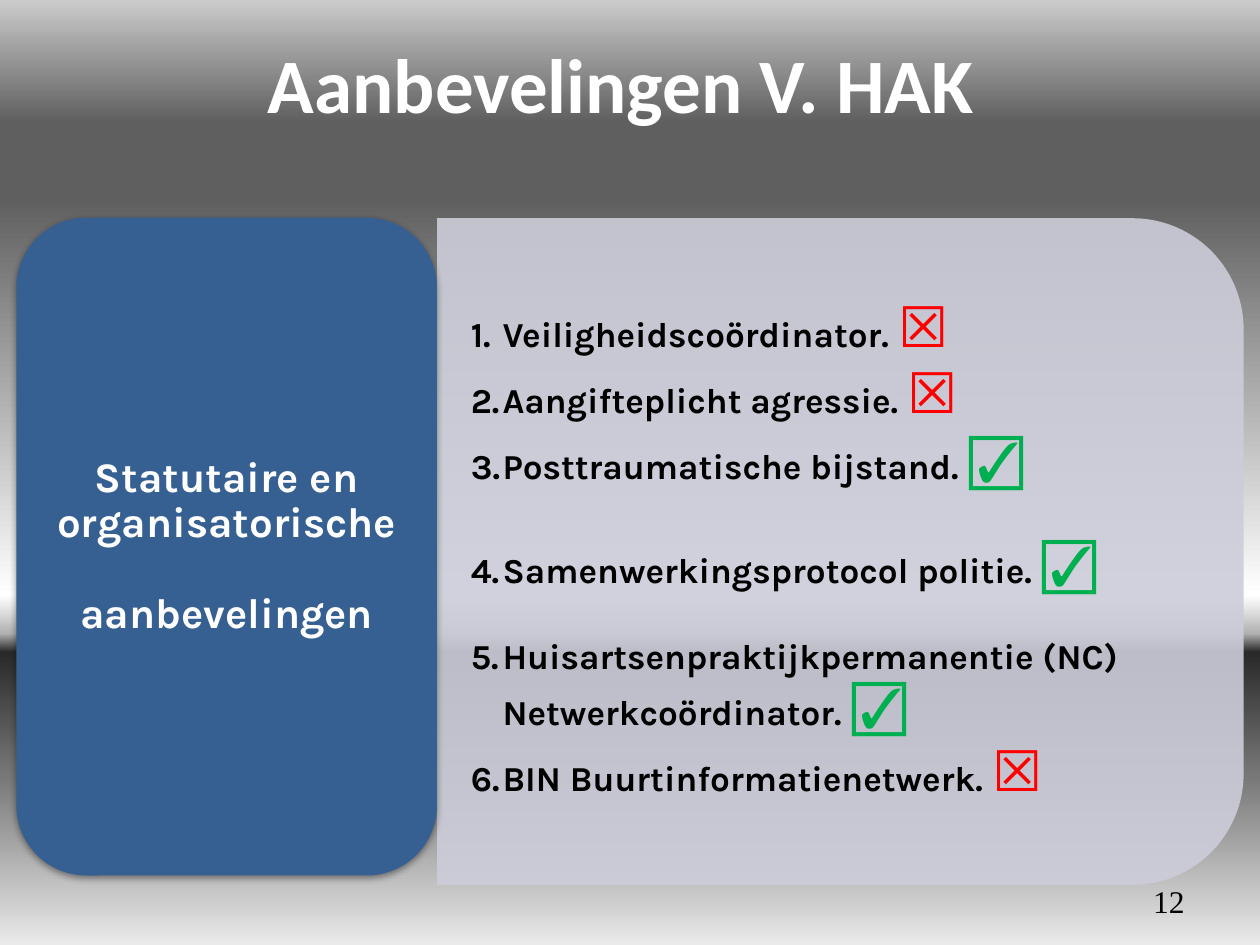
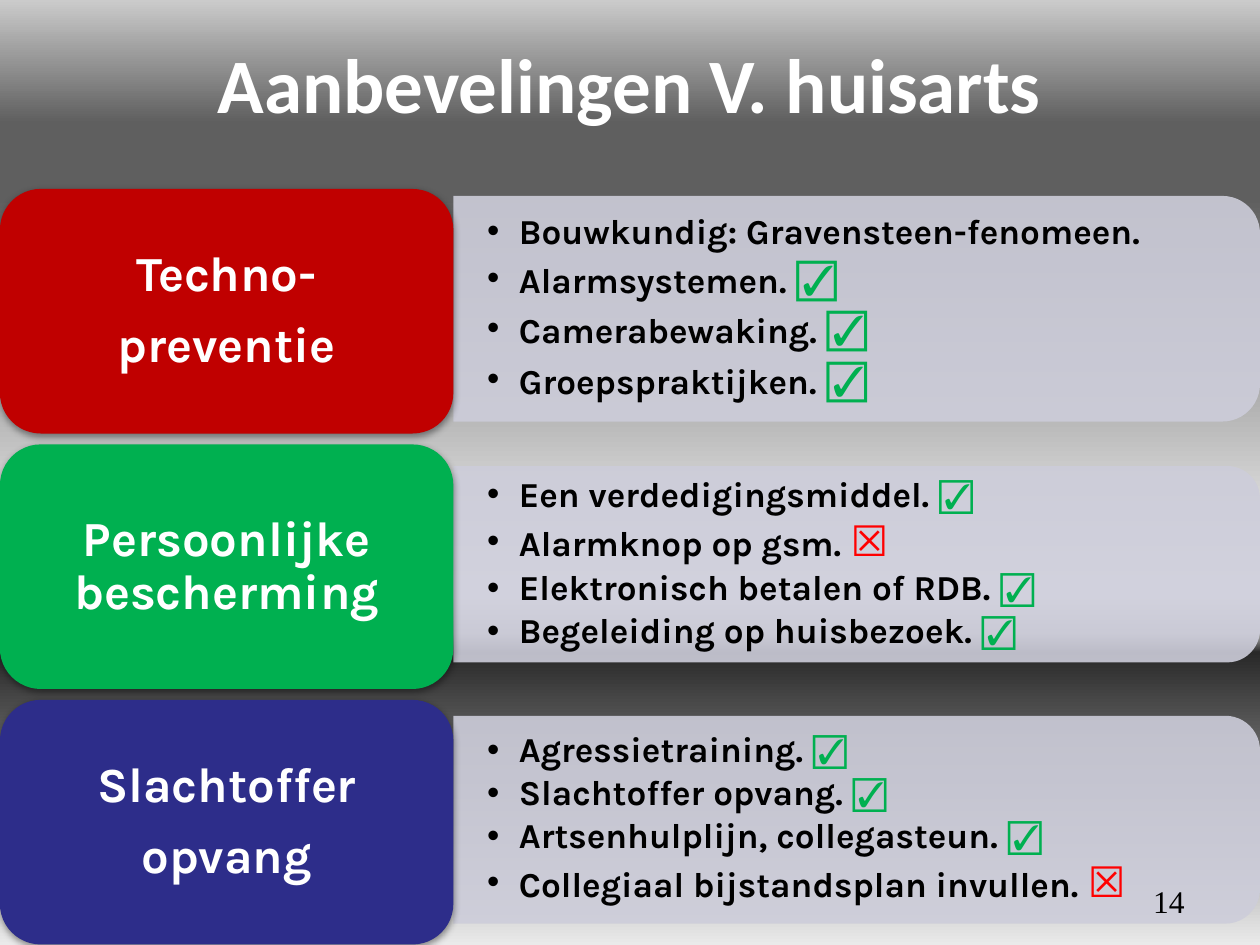
from dataclasses import dataclass

from lxml import etree
from pptx import Presentation
from pptx import util as u
from pptx.dml.color import RGBColor
from pptx.enum import shapes, text
from pptx.oxml import ns

Cm, Pt = u.Cm, u.Pt

WHITE = RGBColor(0xFF, 0xFF, 0xFF)
BLACK = RGBColor(0x00, 0x00, 0x00)
RED = RGBColor(0xFF, 0x00, 0x00)
GREEN = RGBColor(0x00, 0xB0, 0x50)
DARK_RED = RGBColor(0xC0, 0x00, 0x00)
STEEL_BLUE = RGBColor(0x37, 0x60, 0x92)
INDIGO = RGBColor(0x2D, 0x2D, 0x8A)
LILAC = RGBColor(0xCD, 0xCD, 0xDA)

BACKDROP = [(0, "CBCBCB"), (13, "5F5F5F"), (21, "5F5F5F"), (63, "FFFFFF"),
            (67, "B2B2B2"), (69, "292929"), (82, "777777"), (100, "EAEAEA")]
YES, NO = "☑", "☒"
MARK_COLORS = {YES: GREEN, NO: RED}

TITLE_FONT = {"name": "Calibri", "size": Pt(44), "bold": True}
LABEL_FONT = {"name": "Karla", "bold": True}
ITEM_FONT = {"name": "Karla", "size": Pt(20), "bold": True}
MARK_FONT = {"name": "Calibri", "bold": True}
NUMBER_FONT = {"name": "Times New Roman", "size": Pt(18)}
LIST_FRAME = {"word_wrap": True, "auto_size": text.MSO_AUTO_SIZE.NONE,
              "vertical_anchor": text.MSO_ANCHOR.MIDDLE,
              "margin_left": Cm(0.68), "margin_right": Cm(0.68),
              "margin_top": Cm(0.35), "margin_bottom": Cm(0.35)}
LABEL_FRAME = {"word_wrap": True, "vertical_anchor": text.MSO_ANCHOR.MIDDLE,
               "margin_left": Cm(0.3), "margin_right": Cm(0.3),
               "margin_top": Cm(0.15), "margin_bottom": Cm(0.15)}
BULLET = ("a:buChar", {"char": "•"})
NUMBERED = ("a:buAutoNum", {"type": "arabicPeriod"})


@dataclass
class Box:
    """A rectangle in centimetres."""
    left: float
    top: float
    width: float
    height: float

    def lengths(self):
        return [Cm(side) for side in (self.left, self.top, self.width, self.height)]


@dataclass
class Item:
    words: str
    mark: str = ""
    mark_size: int = 20
    gap: int = 3


def assign(target, formats):
    for name, value in formats.items():
        setattr(target, name, value)


def add_node(parent, tag, **attributes):
    return etree.SubElement(parent, ns.qn(tag), attributes)


def add_span(para, words, font, color):
    span = para.add_run()
    span.text = words
    assign(span.font, font)
    span.font.color.rgb = color


def place(shape, box):
    assign(shape, dict(zip(("left", "top", "width", "height"), box.lengths())))


def paint_backdrop(master):
    fill = master.background.fill
    fill.gradient()
    fill.gradient_angle = 270
    stops = master.element.find(".//" + ns.qn("a:gsLst"))
    for stop in list(stops):
        stops.remove(stop)
    for percent, color in BACKDROP:
        stop = add_node(stops, "a:gs", pos=str(percent * 1000))
        add_node(stop, "a:srgbClr", val=color)


def add_page(deck, layout, title, number):
    page = deck.slides.add_slide(deck.slide_layouts[layout])
    heading = page.shapes.title
    place(heading, Box(1.27, 0.08, 22.86, 3.17))
    heading.text_frame.vertical_anchor = text.MSO_ANCHOR.MIDDLE
    para = heading.text_frame.paragraphs[0]
    para.alignment = text.PP_ALIGN.CENTER
    add_span(para, title, TITLE_FONT, WHITE)
    return page, list(page.placeholders)[1:], number


def add_page_number(page, number):
    corner = page.shapes.add_textbox(*Box(18.21, 17.65, 5.92, 1.02).lengths())
    assign(corner.text_frame, {"word_wrap": True,
                               "vertical_anchor": text.MSO_ANCHOR.MIDDLE})
    para = corner.text_frame.paragraphs[0]
    para.alignment = text.PP_ALIGN.RIGHT
    add_span(para, str(number), NUMBER_FONT, BLACK)


def add_label(page, box, color, lines, size, gap):
    label = page.shapes.add_shape(shapes.MSO_SHAPE.ROUNDED_RECTANGLE, *box.lengths())
    label.fill.solid()
    label.fill.fore_color.rgb = color
    label.line.fill.background()
    effects = add_node(label.element.spPr, "a:effectLst")
    shadow = add_node(effects, "a:outerShdw", blurRad=str(Pt(4)), dist=str(Pt(1.6)),
                      dir="5400000", rotWithShape="0")
    add_node(add_node(shadow, "a:srgbClr", val="000000"), "a:alpha", val="42000")
    frame = label.text_frame
    assign(frame, LABEL_FRAME)
    for index, line in enumerate(lines):
        para = frame.add_paragraph() if index else frame.paragraphs[0]
        assign(para, {"alignment": text.PP_ALIGN.CENTER, "line_spacing": 0.9,
                      "space_after": Pt(gap)})
        add_span(para, line, {**LABEL_FONT, "size": Pt(size)}, WHITE)


def add_panel(page, box):
    """Draw a panel whose two right corners are round: a turned preset."""
    panel = page.shapes.add_shape(
        shapes.MSO_SHAPE.ROUND_2_SAME_RECTANGLE,
        *Box(box.left + (box.width - box.height) / 2,
             box.top + (box.height - box.width) / 2, box.height, box.width).lengths())
    panel.rotation = 90
    panel.shadow.inherit = False
    panel.fill.solid()
    panel.fill.fore_color.rgb = LILAC
    add_node(panel.element.spPr.find(".//" + ns.qn("a:srgbClr")), "a:alpha", val="90000")
    panel.line.fill.background()


def fill_list(page, body, box, items, marker):
    """Write the items over a panel, clear of its round corners."""
    inset = 0.29 * box.height / 6
    place(body, Box(box.left, box.top + inset, box.width - inset, box.height - 2 * inset))
    page.shapes.element.append(body.element)
    frame = body.text_frame
    assign(frame, LIST_FRAME)
    tag, attributes = marker
    for index, item in enumerate(items):
        para = frame.add_paragraph() if index else frame.paragraphs[0]
        assign(para, {"alignment": text.PP_ALIGN.LEFT, "line_spacing": 0.9,
                      "space_before": Pt(0), "space_after": Pt(item.gap)})
        layout = para._p.get_or_add_pPr()
        layout.set("marL", str(Cm(0.64)))
        layout.set("indent", str(Cm(-0.64)))
        add_node(layout, tag, **attributes)
        add_span(para, item.words + (" " if item.mark else ""), ITEM_FONT, BLACK)
        if item.mark:
            add_span(para, item.mark, {**MARK_FONT, "size": Pt(item.mark_size)},
                     MARK_COLORS[item.mark])


def add_organisation_page(deck):
    page, bodies, number = add_page(deck, 1, "Aanbevelingen V. HAK ", 12)
    panel = Box(8.81, 4.4, 16.26, 13.44)
    add_panel(page, panel)
    fill_list(page, bodies[0], panel, [
        Item("Veiligheidscoördinator.", NO, 32),
        Item("Aangifteplicht agressie.", NO, 32),
        Item("Posttraumatische bijstand.", YES, 32, 25),
        Item("Samenwerkingsprotocol politie.", YES, 32, 25),
        Item("Huisartsenpraktijkpermanentie (NC) Netwerkcoördinator.", YES, 32),
        Item("BIN Buurtinformatienetwerk.", NO, 32),
    ], NUMBERED)
    add_label(page, Box(0.33, 4.39, 8.48, 13.26), STEEL_BLUE,
              ["Statutaire en organisatorische", "aanbevelingen"], 24, 26)
    add_page_number(page, number)


def add_practice_page(deck):
    page, bodies, number = add_page(deck, 4, "Aanbevelingen V. huisarts", 14)
    rows = [
        (DARK_RED, ["Techno-", "preventie"], 4.55, [
            Item("Bouwkundig: Gravensteen-fenomeen."),
            Item("Alarmsystemen.", YES, 24),
            Item("Camerabewaking.", YES, 24),
            Item("Groepspraktijken.", YES, 24)]),
        (GREEN, ["Persoonlijke bescherming"], 3.96, [
            Item("Een verdedigingsmiddel.", YES),
            Item("Alarmknop op gsm.", NO, 24),
            Item("Elektronisch betalen of RDB.", YES),
            Item("Begeleiding op huisbezoek.", YES)]),
        (INDIGO, ["Slachtoffer", "opvang"], 4.19, [
            Item("Agressietraining.", YES),
            Item("Slachtoffer opvang.", YES),
            Item("Artsenhulplijn, collegasteun.", YES),
            Item("Collegiaal bijstandsplan invullen.", NO, 24)]),
    ]
    for spare in bodies[len(rows):]:
        page.shapes.element.remove(spare.element)
    for index, (color, lines, height, items) in enumerate(rows):
        label = Box(0, 3.81 + 5.15 * index, 9.14, 4.93)
        middle = label.top + label.height / 2 - 0.05
        panel = Box(label.width, middle - height / 2, 16.26, height)
        add_panel(page, panel)
        fill_list(page, bodies[index], panel, items, BULLET)
        add_label(page, label, color, lines, 28, 10)
    add_page_number(page, number)


def main():
    deck = Presentation()
    deck.slide_width, deck.slide_height = Cm(25.4), Cm(19.05)
    paint_backdrop(deck.slide_master)
    add_organisation_page(deck)
    add_practice_page(deck)
    deck.save("out.pptx")


if __name__ == "__main__":
    main()
